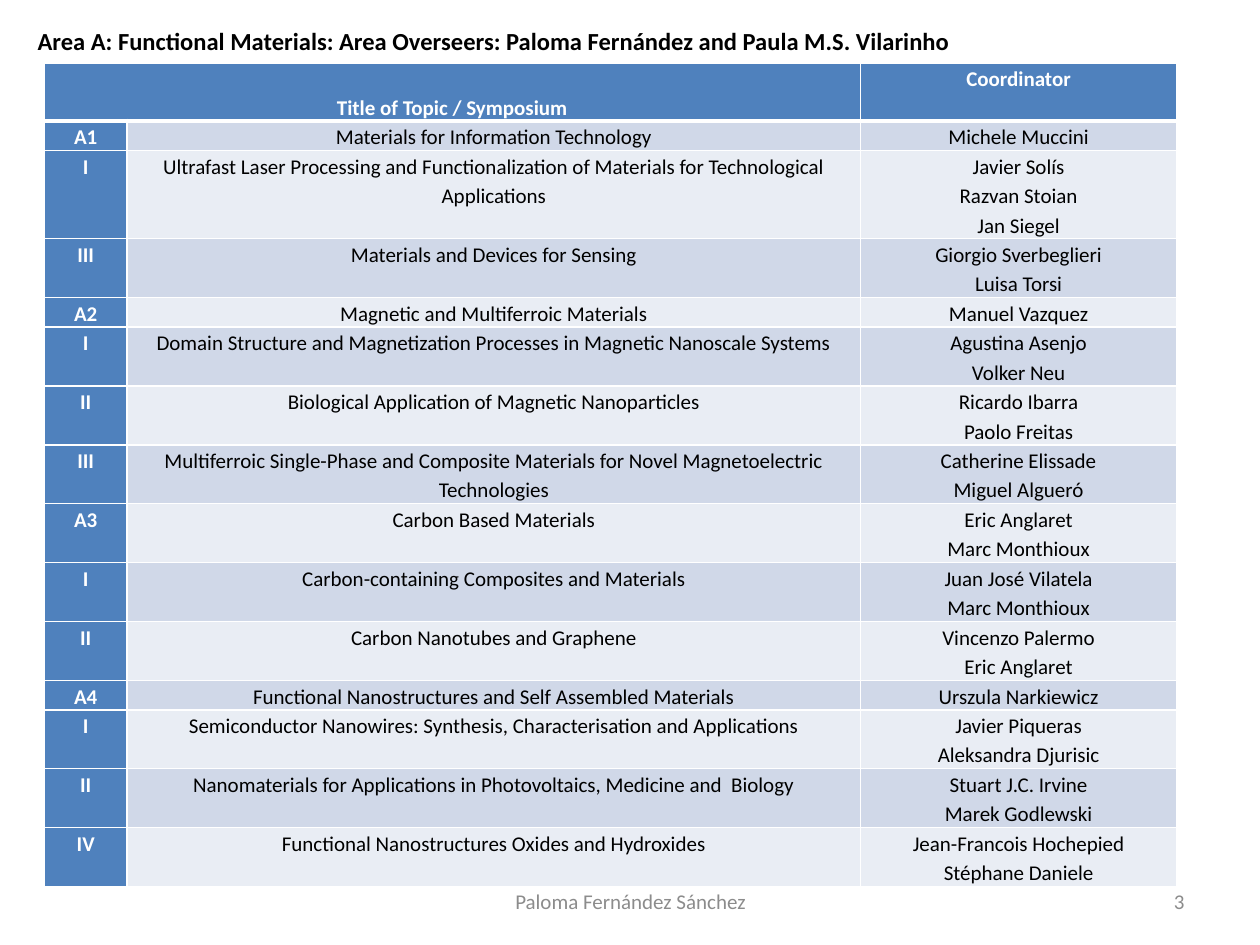
from lxml.etree import SubElement
from pptx import Presentation
from pptx.dml.color import RGBColor
from pptx.enum.text import MSO_ANCHOR, MSO_AUTO_SIZE, PP_ALIGN
from pptx.oxml.ns import qn
from pptx.util import Inches, Pt

ROWS = [
    ("A1", "Materials for Information Technology", "Michele Muccini"),
    ("I", "Ultrafast Laser Processing and Functionalization of Materials for Technological Applications",
     "Javier Solís\nRazvan Stoian\nJan Siegel"),
    ("III", "Materials and Devices for Sensing", "Giorgio Sverbeglieri\nLuisa Torsi"),
    ("A2", "Magnetic and Multiferroic Materials", "Manuel Vazquez"),
    ("I", "Domain Structure and Magnetization Processes in Magnetic Nanoscale Systems",
     "Agustina Asenjo\nVolker Neu"),
    ("II", "Biological Application of Magnetic Nanoparticles", "Ricardo Ibarra\nPaolo Freitas"),
    ("III", "Multiferroic Single-Phase and Composite Materials for Novel Magnetoelectric Technologies",
     "Catherine Elissade\nMiguel Algueró"),
    ("A3", "Carbon Based Materials", "Eric Anglaret\nMarc Monthioux"),
    ("I", "Carbon-containing Composites and Materials", "Juan José Vilatela\nMarc Monthioux"),
    ("II", "Carbon Nanotubes and Graphene", "Vincenzo Palermo\nEric Anglaret"),
    ("A4", "Functional Nanostructures and Self Assembled Materials", "Urszula Narkiewicz"),
    ("I", "Semiconductor Nanowires: Synthesis, Characterisation and Applications",
     "Javier Piqueras\nAleksandra Djurisic"),
    ("II", "Nanomaterials for Applications in Photovoltaics, Medicine and  Biology",
     "Stuart J.C. Irvine\nMarek Godlewski"),
    ("IV", "Functional Nanostructures Oxides and Hydroxides",
     "Jean-Francois Hochepied\nStéphane Daniele"),
]


def paint(target, color):
    target.solid()
    target.fore_color.rgb = RGBColor.from_string(color)


def write(frame, text, size=12, color="000000", bold=False,
          align=PP_ALIGN.CENTER, space=None, font="Calibri"):
    for i, line in enumerate(text.split("\n")):
        para = frame.add_paragraph() if i else frame.paragraphs[0]
        para.alignment = align
        para.line_spacing = space
        run = para.add_run()
        run.text = line
        run.font.name = font
        run.font.size = Pt(size)
        run.font.bold = bold
        paint(run.font.fill, color)


class Deck:
    blue, white, gray = "4F81BD", "FFFFFF", "8C8C8C"
    bands = "E9EDF4", "D0D8E8"
    line = 0.23

    def __init__(self):
        self.show = Presentation()
        self.show.slide_width = Inches(10)
        self.show.slide_height = Inches(7.5)
        self.slide = self.show.slides.add_slide(self.show.slide_layouts[6])

    def label(self, text, left, top, width, height, grow=False, **form):
        box = self.slide.shapes.add_textbox(
            Inches(left), Inches(top), Inches(width), Inches(height))
        frame = box.text_frame
        frame.word_wrap = True
        frame.vertical_anchor = MSO_ANCHOR.MIDDLE
        if grow:
            frame.auto_size = MSO_AUTO_SIZE.SHAPE_TO_FIT_TEXT
        write(frame, text, **form)

    def border(self, cell, top=1, bottom=1):
        props = cell._tc.get_or_add_tcPr()
        for side, width in zip("LRTB", (1, 1, top, bottom)):
            edge = SubElement(props, qn("a:ln" + side), w=str(Pt(width)))
            fill = SubElement(edge, qn("a:solidFill"))
            SubElement(fill, qn("a:srgbClr"), val=self.white)

    def cell(self, cell, text, fill, top=1, bottom=1, **form):
        self.border(cell, top, bottom)
        paint(cell.fill, fill)
        cell.margin_left = cell.margin_right = Inches(0.07)
        cell.margin_top = cell.margin_bottom = 0
        write(cell.text_frame, text, space=1.15, **form)

    def table(self, rows, heads, left, top, widths):
        lines = [2] + [max(1 + (len(title) > 80), 1 + names.count("\n"))
                       for _, title, names in rows]
        grid = self.slide.shapes.add_table(
            len(lines), len(widths), Inches(left), Inches(top),
            Inches(sum(widths)), Inches(sum(lines) * self.line)).table
        grid.horz_banding = False
        for col, width in zip(grid.columns, widths):
            col.width = Inches(width)
        for row, count in zip(grid.rows, lines):
            row.height = Inches(count * self.line)
        strong = {"color": self.white, "bold": True}
        grid.cell(0, 0).merge(grid.cell(0, 1))
        for col, head in zip((0, 2), heads):
            self.cell(grid.cell(0, col), head, self.blue, bottom=3, **strong)
        self.border(grid.cell(0, 1), bottom=3)
        grid.cell(0, 0).vertical_anchor = MSO_ANCHOR.BOTTOM
        for r, row in enumerate(rows, 1):
            for c, text in enumerate(row):
                fill = self.bands[r % 2] if c else self.blue
                form = {} if c else strong
                self.cell(grid.cell(r, c), text, fill, top=3 if r == 1 else 1, **form)


def main():
    deck = Deck()
    deck.table(ROWS, ("Title of Topic / Symposium", "Coordinator"),
               0.35, 0.5, (0.66, 5.82, 2.51))
    deck.label("Area A: Functional Materials: Area Overseers: Paloma Fernández and Paula M.S. Vilarinho",
               0.2, 0.15, 9.29, 0.34, grow=True, size=14, bold=True, align=PP_ALIGN.LEFT)
    deck.label("Paloma Fernández Sánchez", 3.42, 6.95, 3.17, 0.4, color=deck.gray)
    deck.label("3", 7.17, 6.95, 2.33, 0.4, color=deck.gray, align=PP_ALIGN.RIGHT)
    deck.show.save("out.pptx")


if __name__ == "__main__":
    main()
